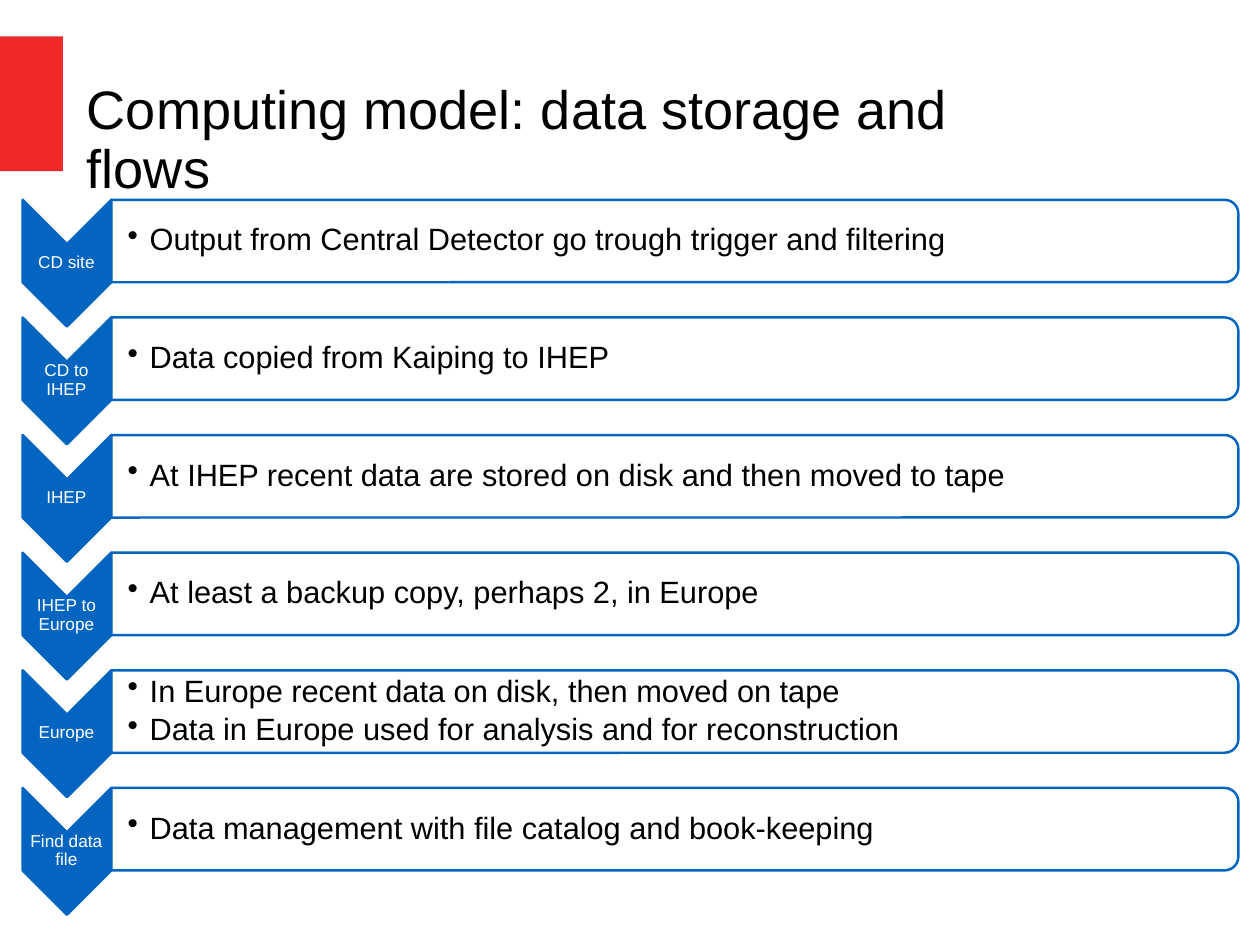
from dataclasses import dataclass

from lxml.etree import SubElement
from pptx import Presentation
from pptx.dml.color import RGBColor
from pptx.enum.shapes import MSO_SHAPE
from pptx.enum.text import MSO_ANCHOR, PP_ALIGN
from pptx.oxml.ns import qn
from pptx.util import Pt


@dataclass(frozen=True)
class Theme:
    """Colours, font and type sizes of the slide."""
    accent: RGBColor = RGBColor(0x03, 0x65, 0xC0)
    marker: RGBColor = RGBColor(0xEF, 0x29, 0x29)
    ink: RGBColor = RGBColor(0, 0, 0)
    paper: RGBColor = RGBColor(0xFF, 0xFF, 0xFF)
    font: str = "Arial"
    title: float = 44
    body: float = 25
    label: float = 14
    line: float = 2


class Deck:
    """Hold the theme and the current slide, and add its elements."""

    def __init__(self, prs, theme):
        """Add a blank slide to the presentation."""
        self.theme = theme
        self.s = prs.slides.add_slide(prs.slide_layouts[6])

    def shape(self, kind, x, y, w, h, fill, line=None):
        """Add a flat preset shape."""
        sp = self.s.shapes.add_shape(kind, Pt(x), Pt(y), Pt(w), Pt(h))
        sp.shadow.inherit = False
        sp.fill.solid()
        sp.fill.fore_color.rgb = fill
        if line is None:
            sp.line.fill.background()
        else:
            sp.line.color.rgb = line
            sp.line.width = Pt(self.theme.line)
        return sp

    def turned(self, kind, x, y, w, h, fill):
        """Add a shape turned a quarter so that it covers the given box."""
        sp = self.shape(kind, x + (w - h) / 2, y + (h - w) / 2, h, w,
                        fill, self.theme.accent)
        sp.rotation = 90
        return sp

    def chevron(self, x, y, w, h):
        """Add a chevron that points down."""
        self.turned(MSO_SHAPE.CHEVRON, x, y, w, h, self.theme.accent)

    def bar(self, x, y, w, h):
        """Add a slightly transparent bar rounded on its right side."""
        sp = self.turned(MSO_SHAPE.ROUND_2_SAME_RECTANGLE, x, y, w, h, self.theme.paper)
        clr = sp._element.spPr.find(qn("a:solidFill")).find(qn("a:srgbClr"))
        SubElement(clr, qn("a:alpha"), val="90000")

    def text(self, lines, x, y, w, h, size, color, inset=0, left=None,
             align=PP_ALIGN.LEFT, after=0, bullet=False):
        """Add a text box with one paragraph per line."""
        sp = self.s.shapes.add_textbox(Pt(x), Pt(y), Pt(w), Pt(h))
        tf = sp.text_frame
        frame = {
            "word_wrap": True,
            "vertical_anchor": MSO_ANCHOR.MIDDLE,
            "margin_left": Pt(inset if left is None else left),
            "margin_right": Pt(inset),
            "margin_top": Pt(inset),
            "margin_bottom": Pt(inset),
        }
        para = {"alignment": align, "line_spacing": 0.9, "space_after": Pt(after)}
        font = {"name": self.theme.font, "size": Pt(size)}
        self.apply(tf, frame)
        for i, line in enumerate(lines):
            p = tf.add_paragraph() if i else tf.paragraphs[0]
            self.apply(p, para)
            r = p.add_run()
            r.text = line
            self.apply(r.font, font)
            r.font.color.rgb = color
            if bullet:
                self.bullet(p)

    def bullet(self, p):
        """Give a paragraph a round bullet and a hanging indent."""
        pPr = p._p.get_or_add_pPr()
        pPr.set("marL", str(Pt(18)))
        pPr.set("indent", str(-Pt(18)))
        SubElement(pPr, qn("a:buChar"), char="•")

    def apply(self, target, values):
        """Set attributes from a dict."""
        for name, value in values.items():
            setattr(target, name, value)

    def step(self, y, label, lines):
        """Add one step of the data flow."""
        t = self.theme
        self.chevron(18.4, y, 72, 103)
        self.text([label], 18, y + 35.6, 72, 31, t.label, t.paper,
                  inset=0.7, align=PP_ALIGN.CENTER, after=5.9)
        self.bar(90.4, y, 916, 67)
        self.text(lines, 90, y + 3.2, 912, 60.5, t.body, t.ink,
                  inset=1.4, left=13.7, after=4.5, bullet=True)


STEPS = [
    ("CD site", ["Output from Central Detector go trough trigger and filtering"]),
    ("CD to IHEP", ["Data copied from Kaiping to IHEP"]),
    ("IHEP", ["At IHEP recent data are stored on disk and then moved to tape"]),
    ("IHEP to Europe", ["At least a backup copy, perhaps 2, in Europe"]),
    ("Europe", ["In Europe recent data on disk, then moved on tape",
                "Data in Europe used for analysis and for reconstruction"]),
    ("Find data file", ["Data management with file catalog and book-keeping"]),
]
FIRST_STEP, STEP_PITCH = 162.4, 95.6


def main():
    """Build and save the slide."""
    prs = Presentation()
    prs.slide_width, prs.slide_height = Pt(1024), Pt(768)
    theme = Theme()
    deck = Deck(prs, theme)
    deck.shape(MSO_SHAPE.RECTANGLE, 0, 29.5, 51.2, 109.5, theme.marker)
    deck.text(["Computing model: data storage and flows"],
              70.6, 67, 782.6, 95.8, theme.title, theme.ink)
    for i, (label, lines) in enumerate(STEPS):
        deck.step(FIRST_STEP + i * STEP_PITCH, label, lines)
    prs.save("out.pptx")


if __name__ == "__main__":
    main()
